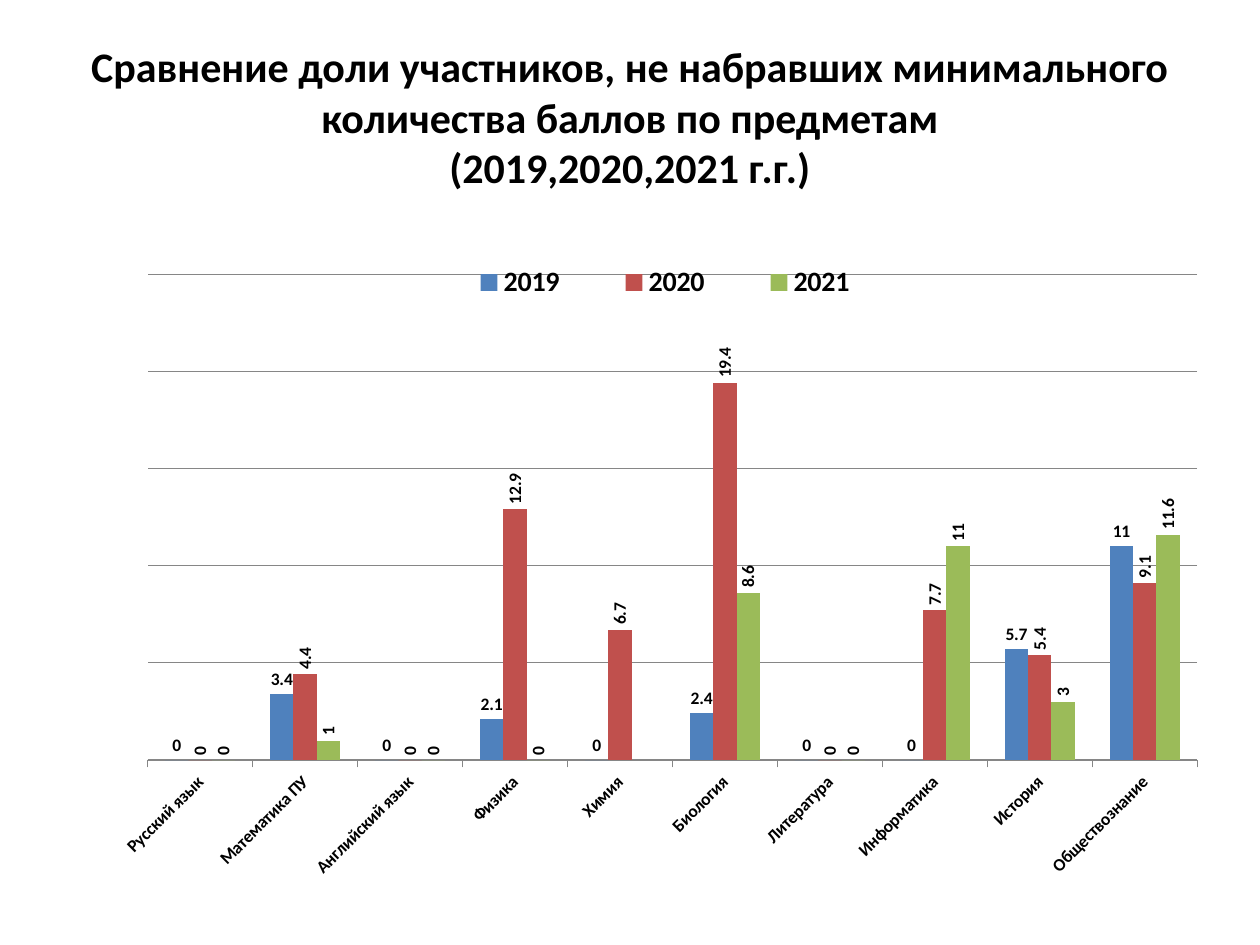
from pptx import Presentation
from pptx.chart.data import CategoryChartData
from pptx.dml.color import RGBColor
from pptx.enum.chart import (XL_CHART_TYPE, XL_LABEL_POSITION, XL_LEGEND_POSITION,
                             XL_TICK_LABEL_POSITION, XL_TICK_MARK)
from pptx.enum.text import MSO_ANCHOR, PP_ALIGN
from pptx.oxml import parse_xml
from pptx.oxml.ns import nsdecls
from pptx.util import Inches, Pt

COLUMNS = XL_CHART_TYPE.COLUMN_CLUSTERED
OUTSIDE_END = XL_LABEL_POSITION.OUTSIDE_END
LEGEND_TOP = XL_LEGEND_POSITION.TOP
LABELS_LOW = XL_TICK_LABEL_POSITION.LOW
TICK_OUT = XL_TICK_MARK.OUTSIDE
CENTER = PP_ALIGN.CENTER
MIDDLE = MSO_ANCHOR.MIDDLE

FONT = "Calibri"
BLACK = "000000"
GRAY = "868686"

TITLE_LINES = [
    "Сравнение доли участников, не набравших минимального количества баллов по предметам",
    "(2019,2020,2021 г.г.)",
]
SUBJECTS = ["Русский язык", "Математика ПУ", "Английский язык", "Физика", "Химия",
            "Биология", "Литература", "Информатика", "История", "Обществознание"]
# Year, values, fill colour, label rotation in degrees
YEARS = [
    ("2019", [0, 3.4, 0, 2.1, 0, 2.4, 0, 0, 5.7, 11], "4F81BD", 0),
    ("2020", [0, 4.4, 0, 12.9, 6.7, 19.4, 0, 7.7, 5.4, 9.1], "C0504D", -90),
    ("2021", [0, 1, 0, 0, None, 8.6, 0, 11, 3, 11.6], "9BBB59", -90),
]


def color(hex_string):
    return RGBColor.from_string(hex_string)


def format_font(font, size=10, bold=True, fill=BLACK):
    font.name = FONT
    font.size = Pt(size)
    font.bold = bold
    font.color.rgb = color(fill)


def write_text(text_frame, lines, align=CENTER, **font_format):
    """Write one paragraph, with a line break between lines."""
    paragraph = text_frame.paragraphs[0]
    paragraph.alignment = align
    for index, line in enumerate(lines):
        if index:
            paragraph.add_line_break()
        run = paragraph.add_run()
        run.text = line
        format_font(run.font, **font_format)


def rotate_text(element, degrees):
    element.xpath("c:txPr/a:bodyPr")[0].set("rot", str(degrees * 60000))


def manual_layout(left, top, width, height, inner=False):
    """Place a chart part by fractions of the chart area."""
    target = '<c:layoutTarget val="inner"/>' if inner else ""
    sizes = "".join(f'<c:{name} val="{value}"/>' for name, value in
                    zip("xywh", (left, top, width, height)))
    return parse_xml(
        f'<c:layout {nsdecls("c")}><c:manualLayout>{target}'
        f'<c:xMode val="edge"/><c:yMode val="edge"/>{sizes}'
        "</c:manualLayout></c:layout>")


class SlideBuilder:
    def __init__(self, presentation):
        self.slide = presentation.slides.add_slide(presentation.slide_layouts[6])

    def add_title(self, lines, left, top, width, height):
        box = self.slide.shapes.add_textbox(
            Inches(left), Inches(top), Inches(width), Inches(height))
        box.text_frame.word_wrap = True
        box.text_frame.vertical_anchor = MIDDLE
        write_text(box.text_frame, lines, size=24)

    def add_column_chart(self, categories, years, left, top, width, height):
        data = CategoryChartData()
        data.categories = categories
        for name, values, _, _ in years:
            data.add_series(name, values)
        chart = self.slide.shapes.add_chart(
            COLUMNS, Inches(left), Inches(top), Inches(width), Inches(height), data).chart
        chart.has_title = False
        format_font(chart.font, bold=False)
        self.style_columns(chart.plots[0], years)
        self.style_axes(chart)
        self.style_legend(chart)

        # Plot area
        plot_area = chart.plots[0]._element.getparent()
        for layout in plot_area.xpath("c:layout"):
            plot_area.remove(layout)
        plot_area.insert(0, manual_layout(0.044, 0.098, 0.935, 0.705, inner=True))

    def style_columns(self, plot, years):
        plot.gap_width = 150
        plot.overlap = 0
        plot.vary_by_categories = False
        for series, (_, _, fill, rotation) in zip(plot.series, years):
            series.format.fill.solid()
            series.format.fill.fore_color.rgb = color(fill)
            series.invert_if_negative = False
            labels = series.data_labels
            labels.show_value = True
            labels.position = OUTSIDE_END
            format_font(labels.font)
            rotate_text(labels._element, rotation)

    def style_axes(self, chart):
        category_axis = chart.category_axis
        category_axis.major_tick_mark = TICK_OUT
        category_axis.tick_label_position = LABELS_LOW
        category_axis.format.line.color.rgb = color(GRAY)
        format_font(category_axis.tick_labels.font)
        rotate_text(category_axis._element, -45)

        value_axis = chart.value_axis
        value_axis.minimum_scale = 0
        value_axis.maximum_scale = 25
        value_axis.major_unit = 5
        value_axis.visible = False
        value_axis.has_major_gridlines = True
        value_axis.major_gridlines.format.line.color.rgb = color(GRAY)

    def style_legend(self, chart):
        chart.has_legend = True
        legend = chart.legend
        legend.position = LEGEND_TOP
        legend.include_in_layout = True
        format_font(legend.font, size=16)
        legend._element.xpath("c:legendPos")[0].addnext(
            manual_layout(0.29, 0.07, 0.43, 0.08))


def main():
    presentation = Presentation()
    presentation.slide_width = Inches(10)
    presentation.slide_height = Inches(7.5)
    builder = SlideBuilder(presentation)

    # Title
    builder.add_title(TITLE_LINES, 0.5, 0.3, 9, 1.25)

    # Share of participants by subject and year
    builder.add_column_chart(SUBJECTS, YEARS, 0.78, 1.64, 8.91, 5.47)

    presentation.save("out.pptx")


if __name__ == "__main__":
    main()
